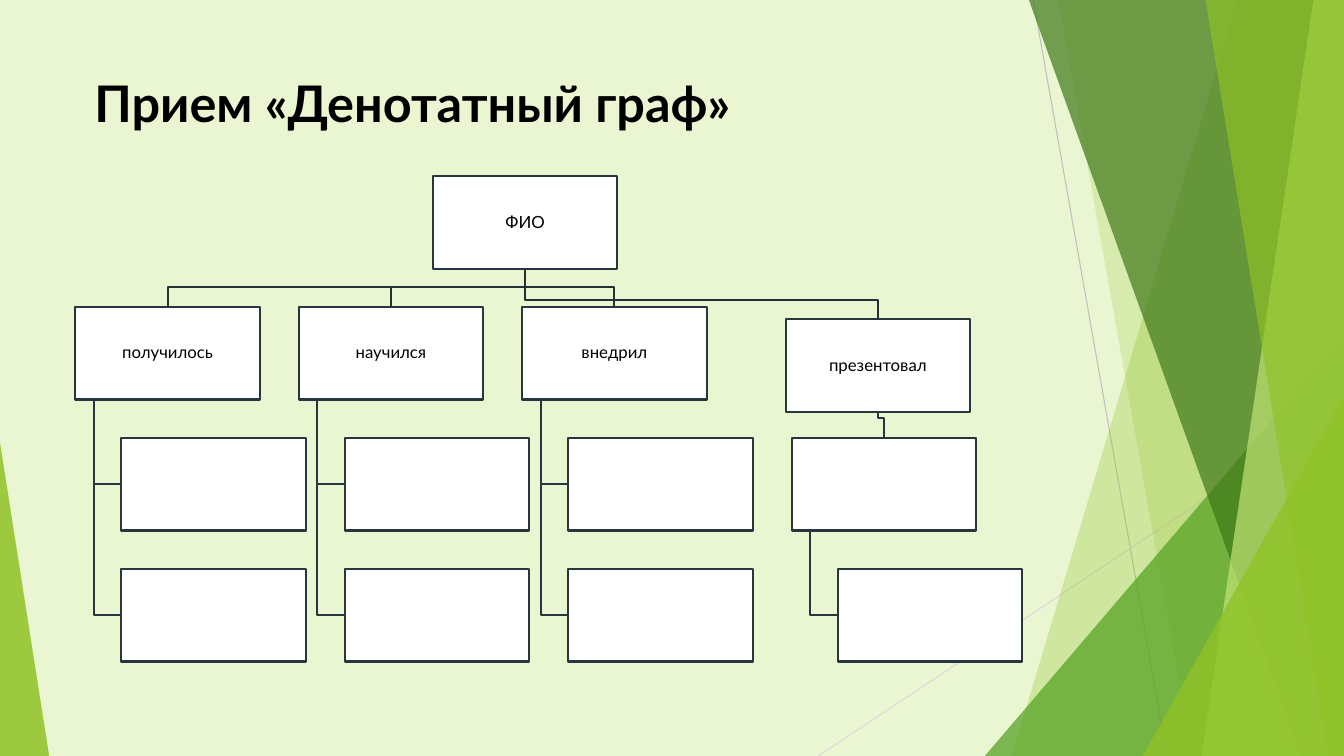
import pptx
import pptx.dml.color
import pptx.enum.shapes
import pptx.enum.text
import pptx.util
from lxml import etree
from pptx.oxml.ns import qn

Cm = pptx.util.Cm
Pt = pptx.util.Pt
SHAPE = pptx.enum.shapes.MSO_SHAPE
ANCHOR = pptx.enum.text.MSO_ANCHOR
ALIGN = pptx.enum.text.PP_ALIGN

W, H = 33.87, 19.05
NODE_W, NODE_H = 4.65, 2.34
COL_STEP, ROW_STEP = 5.63, 3.3
INDENT = 1.16   # second-level boxes start this far right of their parent
STEM = 0.47     # side stem, measured from the parent's left edge
BEND = 0.49     # height of the elbow above a child box


def rgb(code):
    return pptx.dml.color.RGBColor.from_string(code)


class Canvas:
    font = "Lato"
    edge = "28363D"
    trunk = "233036"
    line_width = 1.5

    def __init__(self, slide):
        self.s = slide

    def fill(self, sp, color, opacity=100):
        sp.fill.solid()
        sp.fill.fore_color.rgb = rgb(color)
        if opacity < 100:
            clr = sp._element.spPr.find(qn("a:solidFill"))[0]
            etree.SubElement(clr, qn("a:alpha"), val=str(opacity * 1000))

    def outline(self, sp, color, width):
        sp.line.color.rgb = rgb(color)
        sp.line.width = Pt(width)

    def line(self, x1, y1, x2, y2, color):
        cn = self.s.shapes.add_connector(
            pptx.enum.shapes.MSO_CONNECTOR.STRAIGHT, Cm(x1), Cm(y1), Cm(x2), Cm(y2))
        self.outline(cn, color, 0.75)
        etree.SubElement(cn._element.spPr, qn("a:effectLst"))

    def polyline(self, points, close):
        pts = [(Cm(x), Cm(y)) for x, y in points]
        fb = self.s.shapes.build_freeform(*pts[0])
        fb.add_line_segments(pts[1:], close=close)
        sp = fb.convert_to_shape()
        sp.shadow.inherit = False
        return sp

    def facet(self, top, bottom, color, opacity):
        """Band from a slanted left edge to the right side of the slide."""
        sp = self.polyline([(top, 0), (W, 0), (W, H), (bottom, H)], True)
        self.fill(sp, color, opacity)
        sp.line.fill.background()

    def corner(self, x, y, w, apex, color, opacity):
        """Triangle standing on the bottom edge of the slide."""
        sp = self.s.shapes.add_shape(SHAPE.ISOSCELES_TRIANGLE, Cm(x), Cm(y), Cm(w), Cm(H - y))
        sp.adjustments[0] = apex
        sp.shadow.inherit = False
        self.fill(sp, color, opacity)
        sp.line.fill.background()

    def link(self, points, color):
        sp = self.polyline(points, False)
        sp.fill.background()
        self.outline(sp, color, self.line_width)

    def drop(self, parent, child, color):
        """Link from the parent's bottom centre to the child's top centre."""
        x1, x2 = parent[0] + NODE_W / 2, child[0] + NODE_W / 2
        bend = child[1] - BEND
        self.link([(x1, parent[1] + NODE_H), (x1, bend), (x2, bend), (x2, child[1])], color)

    def hang(self, parent, child):
        """Link from the parent's stem to the child's left side."""
        x, y = parent[0] + STEM, child[1] + NODE_H / 2
        self.link([(x, parent[1] + NODE_H), (x, y), (child[0], y)], self.edge)

    def label(self, sp, text, size, bold=False):
        tf = sp.text_frame
        tf.word_wrap = True
        tf.text = text
        p = tf.paragraphs[0]
        r = p.runs[0]
        r.font.name = self.font
        r.font.size = Pt(size)
        r.font.bold = bold
        r.font.color.rgb = rgb("000000")
        return tf, p

    def title(self, x, y, w, h, text):
        tf, p = self.label(self.s.shapes.add_textbox(Cm(x), Cm(y), Cm(w), Cm(h)), text, 36, True)
        tf.vertical_anchor = ANCHOR.TOP
        p.alignment = ALIGN.LEFT

    def node(self, pos, text=""):
        sp = self.s.shapes.add_shape(
            SHAPE.RECTANGLE, Cm(pos[0]), Cm(pos[1]), Cm(NODE_W), Cm(NODE_H))
        sp.shadow.inherit = False
        self.fill(sp, "FFFFFF")
        self.outline(sp, self.edge, self.line_width)
        if text:
            tf, p = self.label(sp, text, 12)
            tf.margin_left = tf.margin_right = tf.margin_top = tf.margin_bottom = Cm(0.02)
            tf.vertical_anchor = ANCHOR.MIDDLE
            p.alignment = ALIGN.CENTER
            p.line_spacing = 0.9


def main():
    prs = pptx.Presentation()
    prs.slide_width, prs.slide_height = Cm(W), Cm(H)
    s = prs.slides.add_slide(prs.slide_layouts[6])
    s.background.fill.solid()
    s.background.fill.fore_color.rgb = rgb("EAF6D1")
    c = Canvas(s)

    # Background decoration
    c.line(26.04, 0, 29.41, H, "BFBFBF")
    c.line(W, 10.24, 20.62, H, "D9D9D9")
    c.facet(31.19, 25.5, "90C226", 30)
    c.facet(26.67, 30.05, "90C226", 20)
    c.corner(24.82, 8.46, W - 24.82, 1, "54A021", 72)
    c.facet(25.93, 32.79, "3F7819", 70)
    c.facet(33.1, 30.28, "C0E474", 70)
    c.facet(30.38, 33.48, "90C226", 65)
    c.corner(28.8, 9.98, W - 28.8, 1, "90C226", 80)
    c.corner(0, 11.15, 1.24, 0, "90C226", 85)

    # Title
    c.title(2.13, 1.7, 23.6, 3.66, "Прием «Денотатный граф»")

    # Graph positions
    left, top = 1.9, 7.73
    root = (10.91, 4.44)
    rows = [top + ROW_STEP, top + 2 * ROW_STEP]
    heads = [(left + i * COL_STEP, top) for i in range(3)]
    children = [[(x + INDENT, y) for y in rows] for x, _ in heads]
    last_head = (19.8, 8.05)
    last_child = (left + INDENT + 3 * COL_STEP, rows[0])
    last_leaf = (last_child[0] + INDENT, rows[1])

    # Links, behind the boxes
    c.hang(last_child, last_leaf)
    c.drop(last_head, last_child, c.edge)
    for head, kids in zip(heads, children):
        for kid in kids:
            c.hang(head, kid)
    for head in heads + [last_head]:
        c.drop(root, head, c.trunk)

    # Boxes
    c.node(root, "ФИО")
    for head, kids, text in zip(heads, children, ["получилось", "научился", "внедрил"]):
        c.node(head, text)
        for kid in kids:
            c.node(kid)
    c.node(last_head, "презентовал")
    c.node(last_child)
    c.node(last_leaf)

    prs.save("out.pptx")


if __name__ == "__main__":
    main()
